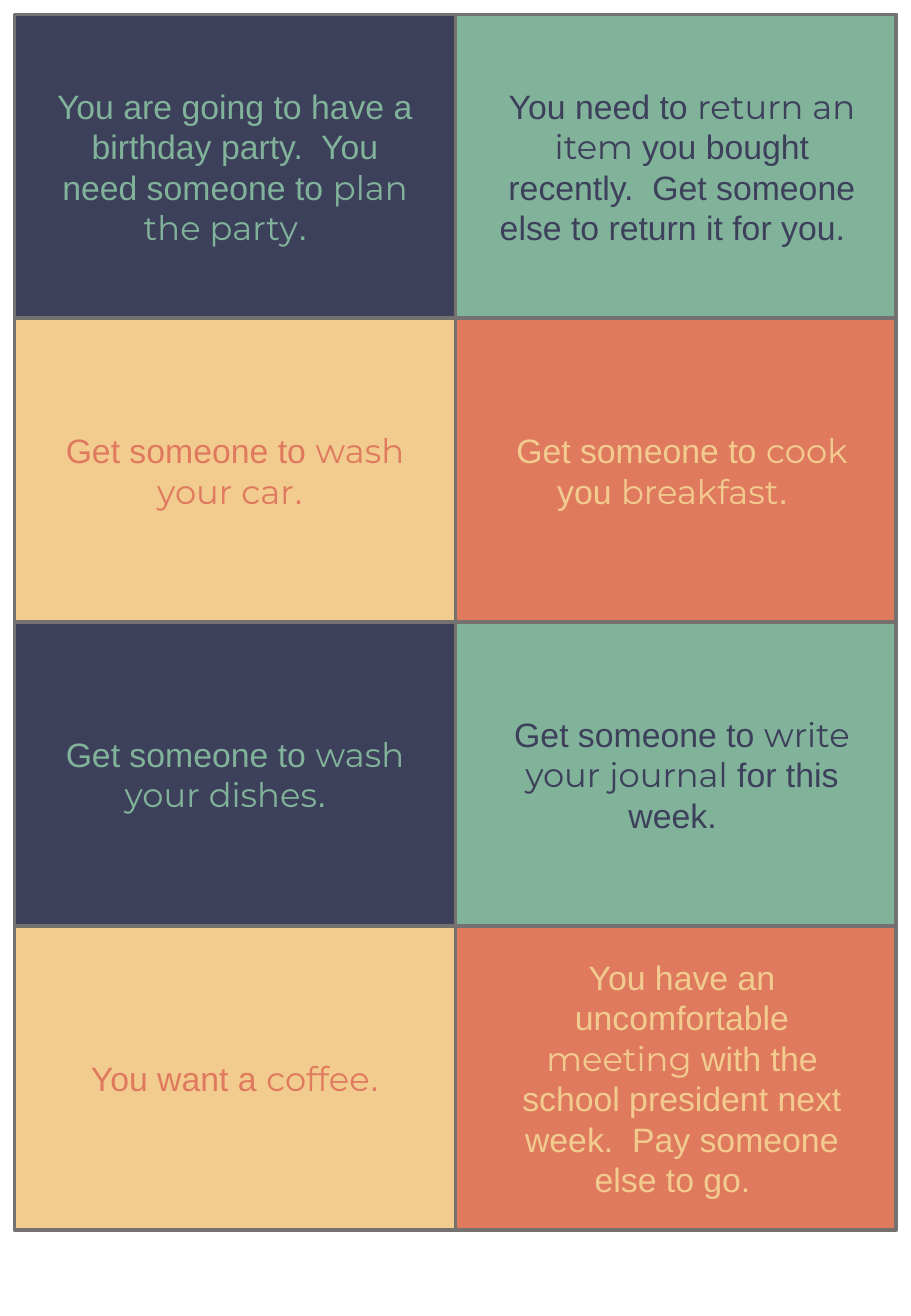
from itertools import cycle

from pptx import Presentation
from pptx import util as u
from pptx.dml.color import RGBColor
from pptx.enum import shapes, text

NAVY, GREEN, SAND, CORAL = "3D405B", "81B29A", "F2CC8F", "E07A5F"
BORDER = "767171"
FONTS = ("Arial", "Montserrat")

# Card grid, in inches
MARGIN = 0.12
CARD_WIDTH, CARD_HEIGHT = 3.63, 2.5
PROMPT_LEFTS = (0.32, 4)
PROMPT_WIDTH = 3.23
LINE_HEIGHT, PADDING = 0.34, 0.1

# Fill and text colour by row parity, then column
PALETTE = (
    ((NAVY, GREEN), (GREEN, NAVY)),
    ((SAND, CORAL), (CORAL, SAND)),
)

# Line count and prompt segments, which alternate between the two fonts
PROMPTS = (
    (
        (4, ("You are going to have a birthday party.  You need someone to ",
             "plan the party", ".  ")),
        (4, ("You need to ", "return an item ",
             "you bought recently.  Get someone else to return it for you.  ")),
    ),
    (
        (2, ("Get someone to ", "wash your car", ". ")),
        (2, ("Get someone to ", "cook", " you ", "breakfast", ".  ")),
    ),
    (
        (2, ("Get someone to ", "wash your dishes", ".  ")),
        (3, ("Get someone to ", "write your journal", " for this week.  ")),
    ),
    (
        (1, ("You want a ", "coffee", ".")),
        (6, ("You have an uncomfortable ", "meeting",
             " with the school president next week.  Pay someone else to go.  ")),
    ),
)


def color(value):
    return RGBColor.from_string(value)


def add_card(slide, row, column, fill):
    shape = slide.shapes.add_shape(
        shapes.MSO_SHAPE.RECTANGLE,
        u.Inches(MARGIN + column * CARD_WIDTH),
        u.Inches(MARGIN + row * CARD_HEIGHT),
        u.Inches(CARD_WIDTH), u.Inches(CARD_HEIGHT))
    shape.shadow.inherit = False
    shape.fill.solid()
    shape.fill.fore_color.rgb = color(fill)
    shape.line.color.rgb = color(BORDER)
    shape.line.width = u.Pt(2.25)


def add_prompt(slide, row, column, lines, segments, ink):
    height = PADDING + lines * LINE_HEIGHT
    middle = MARGIN + (row + 0.5) * CARD_HEIGHT
    box = slide.shapes.add_textbox(
        u.Inches(PROMPT_LEFTS[column]), u.Inches(middle - height / 2),
        u.Inches(PROMPT_WIDTH), u.Inches(height))
    frame = box.text_frame
    frame.word_wrap = True
    frame.auto_size = text.MSO_AUTO_SIZE.SHAPE_TO_FIT_TEXT
    frame.vertical_anchor = text.MSO_ANCHOR.MIDDLE
    paragraph = frame.paragraphs[0]
    paragraph.alignment = text.PP_ALIGN.CENTER
    for segment, font in zip(segments, cycle(FONTS)):
        run = paragraph.add_run()
        run.text = segment
        run.font.name = font
        run.font.size = u.Pt(20)
        run.font.color.rgb = color(ink)


def main():
    presentation = Presentation()
    presentation.slide_width = u.Inches(7.5)
    presentation.slide_height = u.Inches(10.83)
    slide = presentation.slides.add_slide(presentation.slide_layouts[6])

    # Cards with their prompts
    for row, prompts in enumerate(PROMPTS):
        for column, (lines, segments) in enumerate(prompts):
            fill, ink = PALETTE[row % 2][column]
            add_card(slide, row, column, fill)
            add_prompt(slide, row, column, lines, segments, ink)

    presentation.save("out.pptx")


if __name__ == "__main__":
    main()
